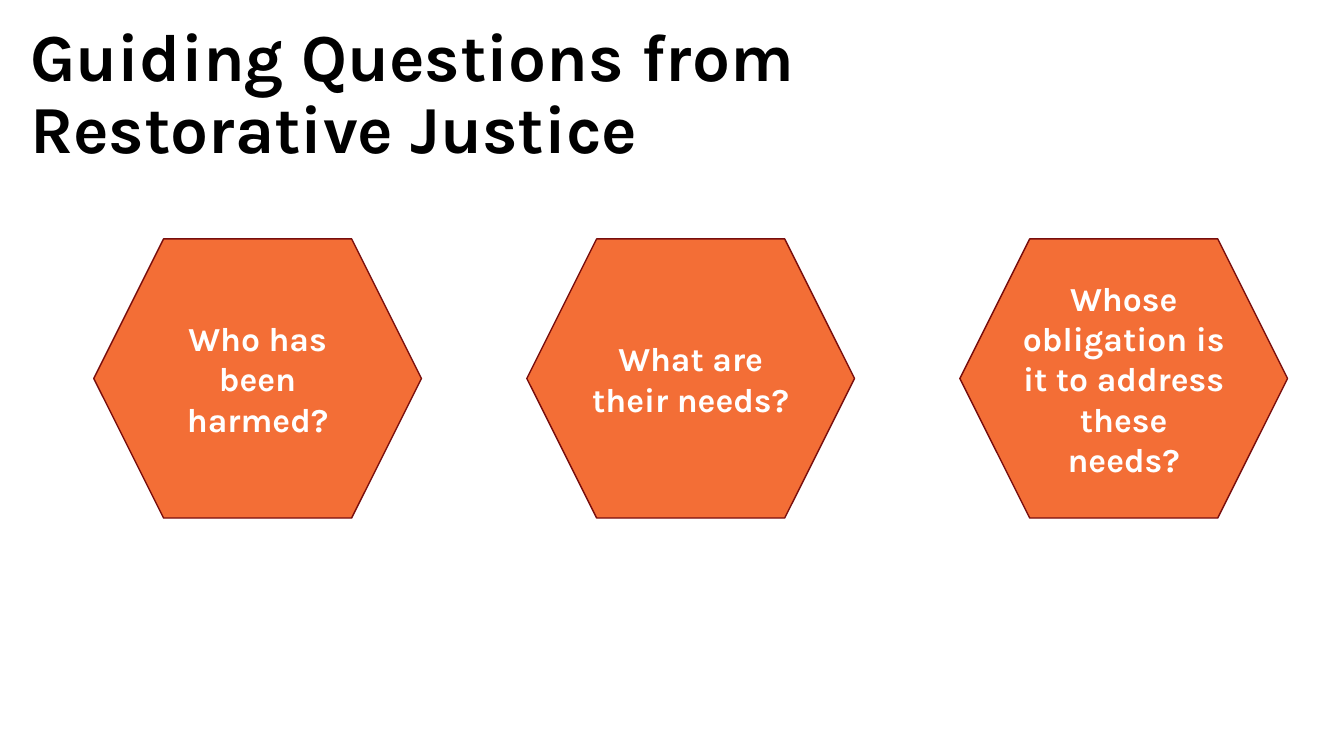
from pptx import Presentation
from pptx import util as u
from pptx.dml.color import RGBColor
from pptx.enum import shapes, text

COLORS = {"title": "000000", "hexagon": "F36E36", "outline": "790E0D", "question": "FFFFFF"}
FONT = "Karla"
QUESTIONS = [
    "Who has been harmed?",
    "What are their needs?",
    "Whose obligation is it to address these needs?",
]


def color(name):
    return RGBColor.from_string(COLORS[name])


def write(frame, wording, *, size, ink, align=text.PP_ALIGN.LEFT, line_spacing=1.0):
    frame.word_wrap = True
    frame.vertical_anchor = text.MSO_ANCHOR.MIDDLE
    paragraph = frame.paragraphs[0]
    paragraph.alignment = align
    paragraph.line_spacing = line_spacing
    run = paragraph.add_run()
    run.text = wording
    run.font.name = FONT
    run.font.size = u.Pt(size)
    run.font.bold = True
    run.font.color.rgb = color(ink)


def add_title(slide, left, top, width, height):
    title = slide.shapes.add_textbox(*map(u.Inches, (left, top, width, height)))
    write(title.text_frame, "Guiding Questions from Restorative Justice",
          size=48, ink="title", line_spacing=0.9)


def add_questions(slide, left, top, width, height, hexagon_width=3.25):
    step = (width - hexagon_width) / (len(QUESTIONS) - 1)
    for index, question in enumerate(QUESTIONS):
        hexagon = slide.shapes.add_shape(
            shapes.MSO_SHAPE.HEXAGON, u.Inches(left + index * step), u.Inches(top),
            u.Inches(hexagon_width), u.Inches(height))
        hexagon.shadow.inherit = False
        hexagon.fill.solid()
        hexagon.fill.fore_color.rgb = color("hexagon")
        hexagon.line.color.rgb = color("outline")
        hexagon.line.width = u.Pt(1)
        write(hexagon.text_frame, question, size=24, ink="question",
              align=text.PP_ALIGN.CENTER)


def main():
    deck = Presentation()
    deck.slide_width = u.Inches(13.33)
    deck.slide_height = u.Inches(7.5)
    slide = deck.slides.add_slide(deck.slide_layouts[6])
    add_title(slide, 0.2, 0.21, 10.72, 1.48)
    add_questions(slide, 0.93, 2.37, 11.84, 2.77)
    deck.save("out.pptx")


if __name__ == "__main__":
    main()
